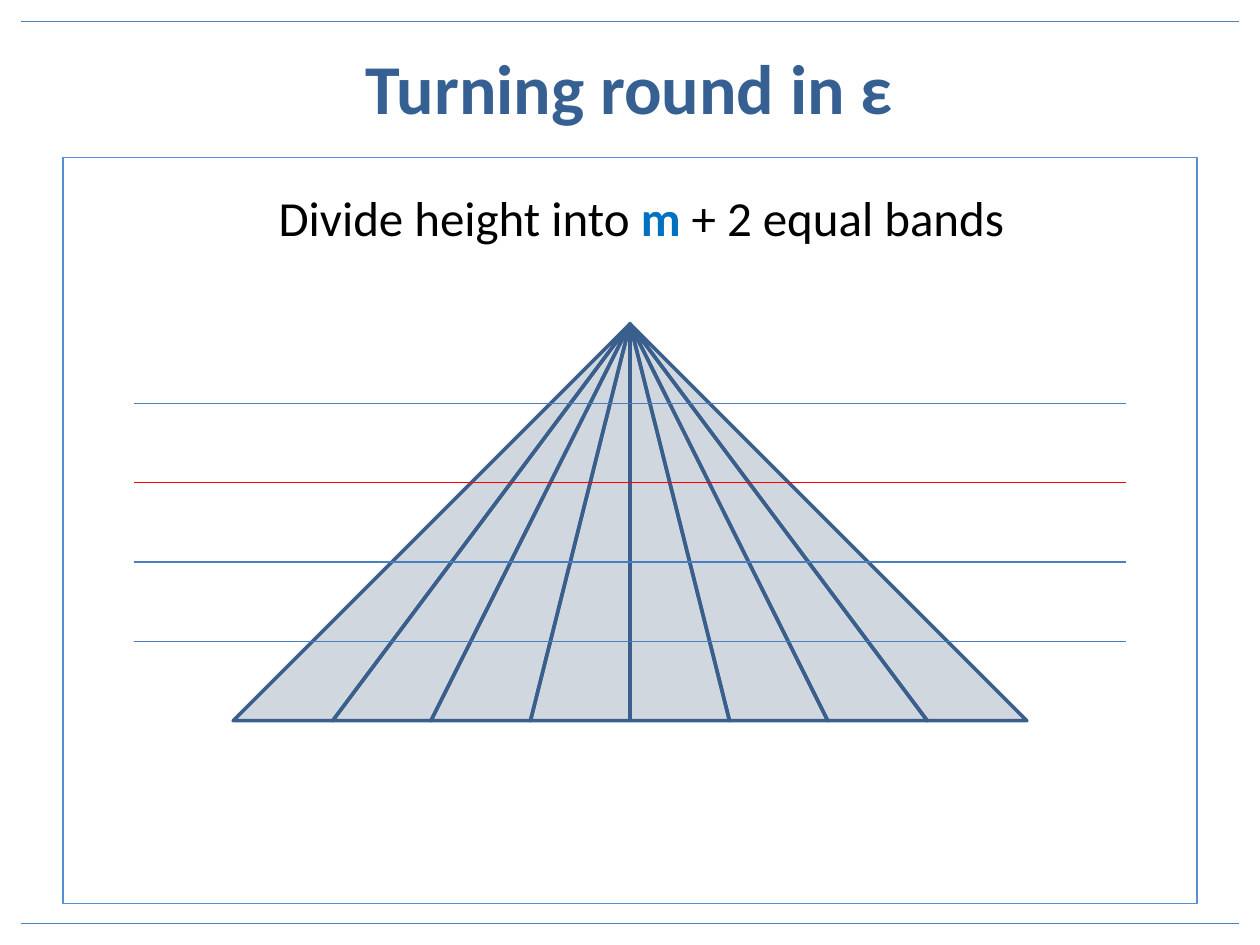
from lxml import etree
from pptx import Presentation
from pptx.dml.color import RGBColor
from pptx.enum.shapes import MSO_CONNECTOR, MSO_SHAPE
from pptx.enum.text import MSO_ANCHOR, PP_ALIGN
from pptx.oxml.ns import qn
from pptx.util import Inches, Pt

STRAIGHT = MSO_CONNECTOR.STRAIGHT
RECT, TRIANGLE = MSO_SHAPE.RECTANGLE, MSO_SHAPE.ISOSCELES_TRIANGLE
CENTER, TOP, MIDDLE = PP_ALIGN.CENTER, MSO_ANCHOR.TOP, MSO_ANCHOR.MIDDLE

THEME = {
    "font": "Calibri", "title_size": 40, "body_size": 28,
    "title": "376092", "text": "000000", "accent": "0070C0",
    "frame": "558ED5", "rule": "4B7EBC", "marked": "FF0000",
    "wedge": "17375E", "wedge_edge": "3A5F8C", "wedge_alpha": 20,
    "thin": 0.75, "thick": 2,
}

# Content: runs as (text, colour, bold)
TITLE = [("Turning round in ε", "title", True)]
BODY = [("Divide height into ", "text", False), ("m", "accent", True),
        (" + 2 equal bands", "text", False)]
BAND_COLOURS = ["rule", "marked", "rule", "rule"]  # dividers, top to bottom
WEDGES = 8

# Layout, in inches
W, H = 10, 7.5
RULE_INSET = 0.17
TITLE_BOX = (0.35, 0.25, 9.29, 0.87)
BODY_BOX = (0.5, 1.25, 9, 5.92)
APEX_X, APEX_Y = W / 2, 2.57
BASE_L, BASE_W, FAN_H = 1.85, 6.3, 3.15
DIVIDER_L = 1.06


def colour(name):
    return RGBColor.from_string(THEME[name])


def set_line(s, name, width):
    s.line.color.rgb = colour(name)
    s.line.width = Pt(THEME[width])


def add_runs(tf, runs, size, anchor):
    tf.word_wrap = True
    tf.vertical_anchor = anchor
    p = tf.paragraphs[0]
    p.alignment = CENTER
    for text, name, bold in runs:
        r = p.add_run()
        r.text = text
        r.font.name = THEME["font"]
        r.font.size = Pt(THEME[size])
        r.font.bold = bold
        r.font.color.rgb = colour(name)


def add_rule(shapes, inset, y, name):
    """Draw a horizontal line centred on the slide."""
    c = shapes.add_connector(STRAIGHT, Inches(inset), Inches(y),
                             Inches(W - inset), Inches(y))
    set_line(c, name, "thin")
    etree.SubElement(c._element.spPr, qn("a:effectLst"))


def add_wedge(shapes, left, right):
    """Draw one slice of the fan; the two beside the axis are right triangles."""
    base = APEX_Y + FAN_H
    if APEX_X in (left, right):
        s = shapes.add_shape(TRIANGLE, Inches(left), Inches(APEX_Y),
                             Inches(right - left), Inches(FAN_H))
        s.adjustments[0] = 1 if right == APEX_X else 0
    else:
        fb = shapes.build_freeform(Inches(left), Inches(base))
        fb.add_line_segments([(Inches(APEX_X), Inches(APEX_Y)),
                              (Inches(right), Inches(base))], close=True)
        s = fb.convert_to_shape()
    s.shadow.inherit = False
    s.fill.solid()
    s.fill.fore_color.rgb = colour("wedge")
    clr = s._element.spPr.find(qn("a:solidFill"))[0]
    etree.SubElement(clr, qn("a:alpha"), val=str(THEME["wedge_alpha"] * 1000))
    set_line(s, "wedge_edge", "thick")


def main():
    prs = Presentation()
    prs.slide_width, prs.slide_height = Inches(W), Inches(H)
    shapes = prs.slides.add_slide(prs.slide_layouts[6]).shapes

    for y in (RULE_INSET, H - RULE_INSET):
        add_rule(shapes, RULE_INSET, y, "rule")

    title = shapes.add_textbox(*map(Inches, TITLE_BOX))
    add_runs(title.text_frame, TITLE, "title_size", MIDDLE)

    frame = shapes.add_shape(RECT, *map(Inches, BODY_BOX))
    frame.shadow.inherit = False
    frame.fill.background()
    set_line(frame, "frame", "thin")
    tf = frame.text_frame
    tf.margin_left, tf.margin_top = Inches(0.28), Inches(0.24)
    add_runs(tf, BODY, "body_size", TOP)

    edges = [round(BASE_L + BASE_W * i / WEDGES, 2) for i in range(WEDGES + 1)]
    for left, right in zip(edges, edges[1:]):
        add_wedge(shapes, left, right)

    band = FAN_H / (len(BAND_COLOURS) + 1)
    for i, name in enumerate(BAND_COLOURS, 1):
        add_rule(shapes, DIVIDER_L, APEX_Y + i * band, name)

    prs.save("out.pptx")


if __name__ == "__main__":
    main()
